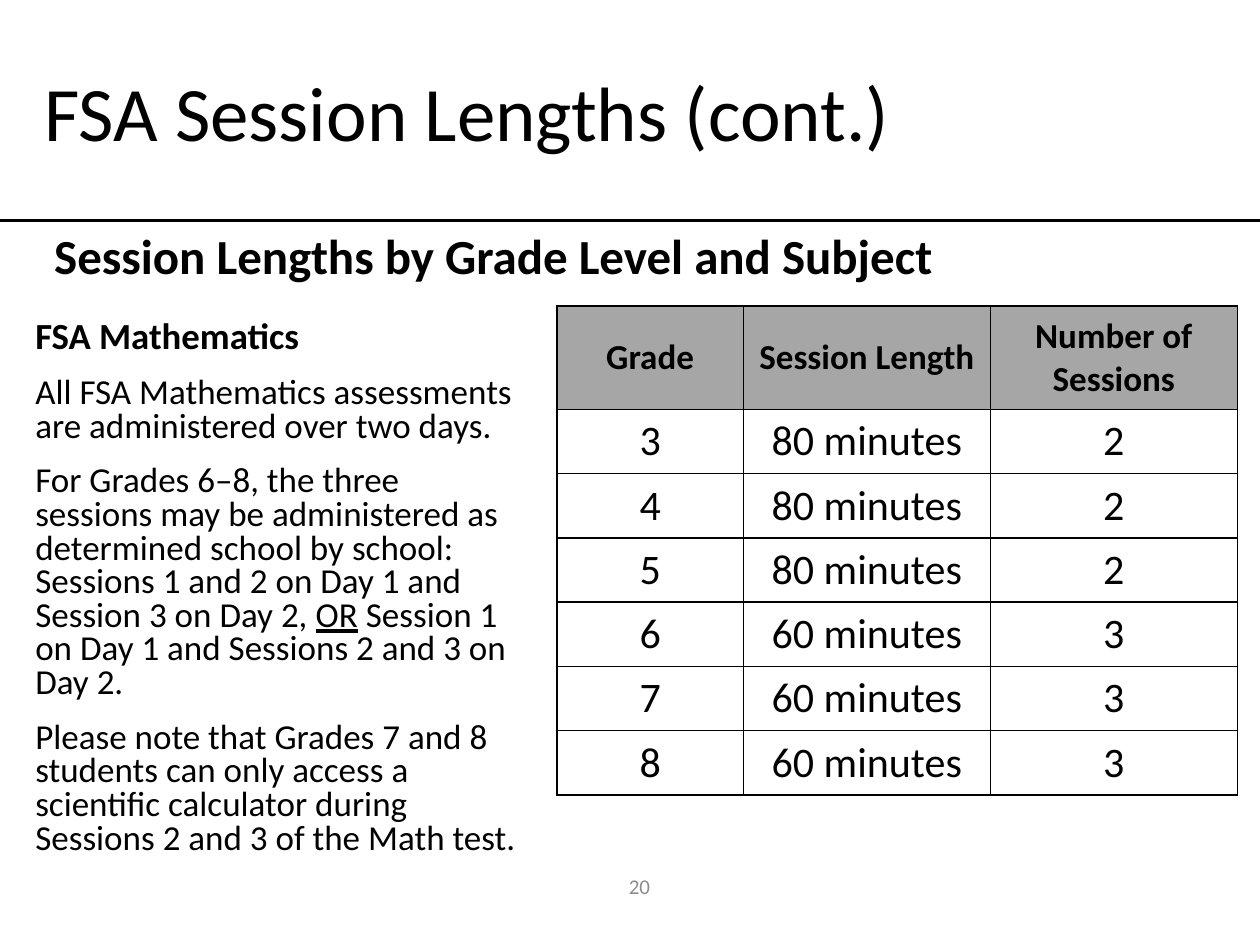
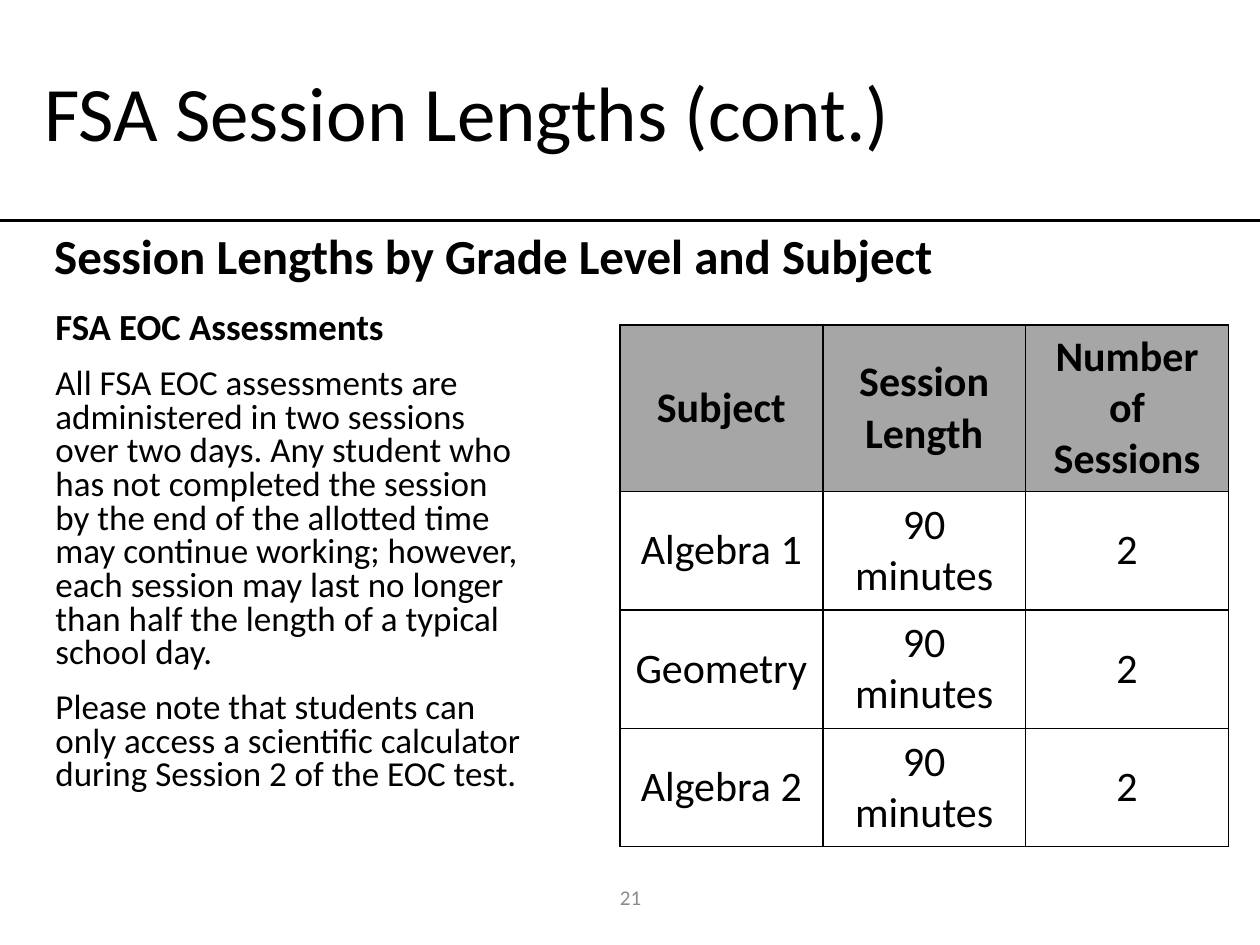
from lxml import etree
from pptx import Presentation
from pptx.dml.color import RGBColor
from pptx.enum.shapes import MSO_CONNECTOR
from pptx.enum.text import MSO_ANCHOR, MSO_AUTO_SIZE, PP_ALIGN
from pptx.oxml.ns import qn
from pptx.util import Pt

PX = 9144  # 100 px to the inch
BLACK, WHITE, HEADER_GREY, NUMBER_GREY = "000000", "FFFFFF", "A6A6A6", "8C8C8C"
FONT = "Calibri"

# Paragraph formats
CENTRED = {"alignment": PP_ALIGN.CENTER}
LIST_FIRST = {"line_spacing": 0.8, "space_before": Pt(0), "space_after": Pt(6)}
LIST_NEXT = LIST_FIRST | {"space_before": Pt(6)}


def color(hex_value):
    return RGBColor.from_string(hex_value)


def write(paragraph, text, layout, size, bold=False, ink=BLACK):
    """Fill a paragraph; words between underscores are underlined."""
    for name, value in layout.items():
        setattr(paragraph, name, value)
    for part, words in enumerate(text.split("_")):
        run = paragraph.add_run()
        run.text = words
        looks = {"name": FONT, "size": Pt(size), "bold": bold}
        if part % 2:
            looks["underline"] = True
        for name, value in looks.items():
            setattr(run.font, name, value)
        run.font.color.rgb = color(ink)


# Content of the two slides
sessions = [
    {
        "number": "20",
        "number_at": (349, 683, 317, 40),
        "notes_at": (18, 250, 408, 483),
        "notes": [
            "FSA Mathematics",
            "All FSA Mathematics assessments are administered over two days.",
            "For Grades 6–8, the three sessions may be administered as determined "
            "school by school: Sessions 1 and 2 on Day 1 and Session 3 on Day 2, "
            "_OR_ Session 1 on Day 1 and Sessions 2 and 3 on Day 2.",
            "Please note that Grades 7 and 8 students can only access a scientific "
            "calculator during Sessions 2 and 3 of the Math test.",
        ],
        "table_at": (442, 243),
        "columns": (148, 196, 196),
        "header_height": 82,
        "row_height": 51,
        "header_size": 20,
        "rows": [("Grade", "Session Length", "Number of Sessions")]
        + [(str(grade), "80 minutes", "2") for grade in (3, 4, 5)]
        + [(str(grade), "60 minutes", "3") for grade in (6, 7, 8)],
    },
    {
        "number": "21",
        "number_at": (342, 692, 317, 40),
        "notes_at": (34, 243, 391, 424),
        "notes": [
            "FSA EOC Assessments",
            "All FSA EOC assessments are administered in two sessions over two days. "
            "Any student who has not completed the session by the end of the allotted "
            "time may continue working; however, each session may last no longer than "
            "half the length of a typical school day.",
            "Please note that students can only access a scientific calculator during "
            "Session 2 of the EOC test.",
        ],
        "table_at": (492, 258),
        "columns": (161, 161, 161),
        "header_height": 132,
        "row_height": 94,
        "header_size": 24,
        "rows": [("Subject", "Session Length", "Number of Sessions")]
        + [(subject, "90 minutes", "2") for subject in ("Algebra 1", "Geometry", "Algebra 2")],
    },
]

prs = Presentation()
prs.slide_width, prs.slide_height = 1000 * PX, 750 * PX
two_content = prs.slide_layouts[3]

for session in sessions:
    slide = prs.slides.add_slide(two_content)
    title, notes, subheading = slide.placeholders
    page_number = slide.shapes.add_textbox(0, 0, PX, PX)

    # Places of the text blocks
    places = [
        (title, (25, 28, 742, 120), MSO_ANCHOR.MIDDLE),
        (notes, session["notes_at"], MSO_ANCHOR.TOP),
        (subheading, (33, 183, 948, 42), MSO_ANCHOR.TOP),
        (page_number, session["number_at"], MSO_ANCHOR.MIDDLE),
    ]
    for block, place, anchor in places:
        for side, length in zip(("left", "top", "width", "height"), place):
            setattr(block, side, length * PX)
        frame_format = {"word_wrap": True, "auto_size": MSO_AUTO_SIZE.NONE, "vertical_anchor": anchor}
        for name, value in frame_format.items():
            setattr(block.text_frame, name, value)

    # Title, subheading and page number
    write(title.text_frame.paragraphs[0], "FSA Session Lengths (cont.)",
          {"alignment": PP_ALIGN.LEFT}, 44)
    write(subheading.text_frame.paragraphs[0], "Session Lengths by Grade Level and Subject",
          LIST_FIRST, 28, bold=True)
    write(page_number.text_frame.paragraphs[0], session["number"], CENTRED, 12, ink=NUMBER_GREY)

    # Notes beside the table: bold heading, then plain paragraphs
    for index, text in enumerate(session["notes"]):
        if index == 0:
            write(notes.text_frame.paragraphs[0], text, LIST_FIRST, 21, bold=True)
        else:
            write(notes.text_frame.add_paragraph(), text, LIST_NEXT, 20)

    # No bullets or hanging indents
    for paragraph in (*notes.text_frame.paragraphs, *subheading.text_frame.paragraphs):
        properties = paragraph._p.get_or_add_pPr()
        properties.set("marL", "0")
        properties.set("indent", "0")
        etree.SubElement(properties, qn("a:buNone"))

    # Table of session lengths
    rows, columns = session["rows"], session["columns"]
    heights = [session["header_height"]] + [session["row_height"]] * (len(rows) - 1)
    left, top = session["table_at"]
    lengths = slide.shapes.add_table(len(rows), len(columns), left * PX, top * PX,
                                     sum(columns) * PX, sum(heights) * PX).table
    for column, width in zip(lengths.columns, columns):
        column.width = width * PX
    for row, height, values in zip(lengths.rows, heights, rows):
        row.height = height * PX
        is_header = values is rows[0]
        for cell, value in zip(row.cells, values):
            for edge in ("a:lnL", "a:lnR", "a:lnT", "a:lnB"):
                border = etree.SubElement(cell._tc.get_or_add_tcPr(), qn(edge), w=str(Pt(1)))
                border_fill = etree.SubElement(border, qn("a:solidFill"))
                etree.SubElement(border_fill, qn("a:srgbClr"), val=BLACK)
            cell.fill.solid()
            cell.fill.fore_color.rgb = color(HEADER_GREY if is_header else WHITE)
            cell.vertical_anchor = MSO_ANCHOR.MIDDLE
            write(cell.text_frame.paragraphs[0], value, CENTRED,
                  session["header_size"] if is_header else 24, bold=is_header)

# Rule under the title, drawn once and moved to the shared layout
title_rule = slide.shapes.add_connector(MSO_CONNECTOR.STRAIGHT, 0, 175 * PX, 1000 * PX, 175 * PX)
title_rule.line.color.rgb = color(BLACK)
title_rule.line.width = Pt(2.25)
etree.SubElement(title_rule._element.spPr, qn("a:effectLst"))
two_content.shapes._spTree.append(title_rule._element)

prs.save("out.pptx")
